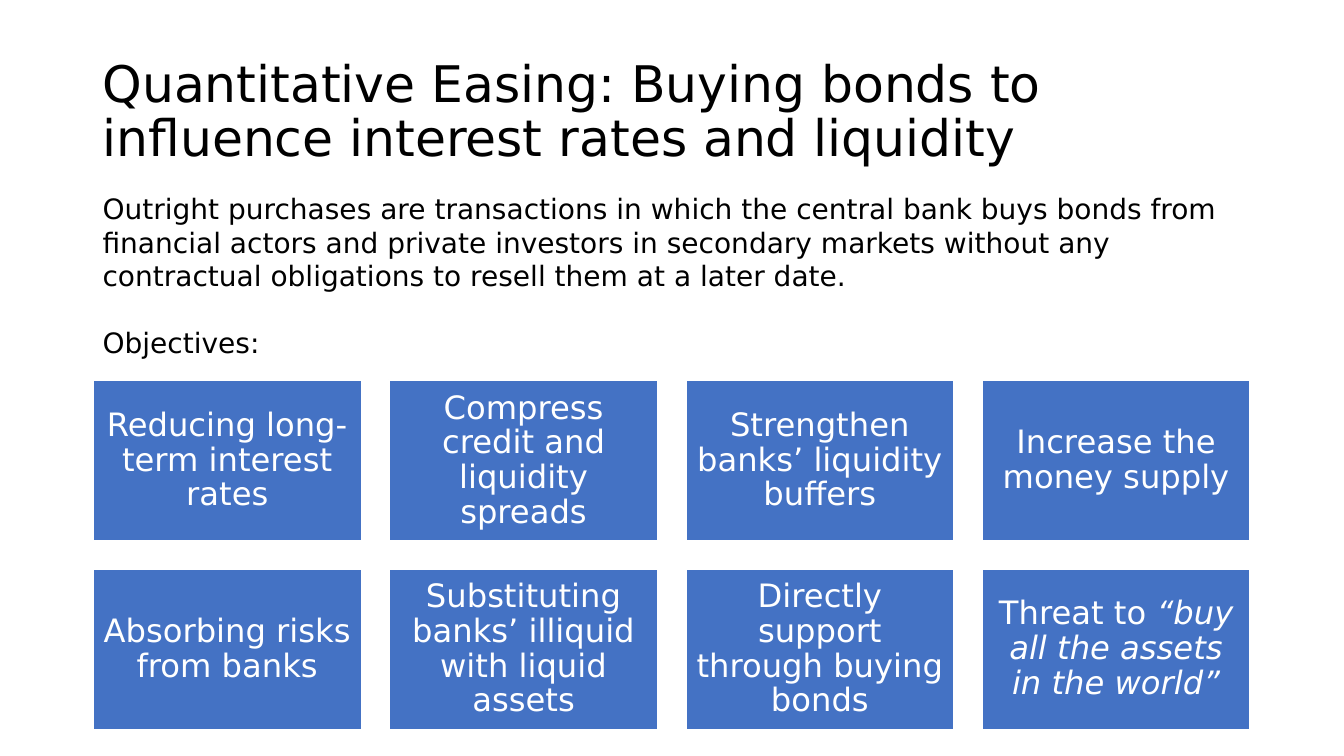
"""Build the slide on quantitative easing and its eight objectives."""
from dataclasses import dataclass

import pptx
import pptx.dml.color
import pptx.enum.shapes
import pptx.enum.text
import pptx.slide
import pptx.text.text
import pptx.util

Pt = pptx.util.Pt
BLACK = pptx.dml.color.RGBColor(0x00, 0x00, 0x00)
WHITE = pptx.dml.color.RGBColor(0xFF, 0xFF, 0xFF)
BLUE = pptx.dml.color.RGBColor(0x44, 0x72, 0xC4)
FONT = "DejaVu Sans"
MARGIN_LEFT = 66.2
CONTENT_WIDTH = 828
COLUMNS = 4
CARD_WIDTH = 192.4
CARD_HEIGHT = 115.4
CARD_GAP = 19.24
CARDS_TOP = 271.4


@dataclass(frozen=True)
class Objective:
    """An aim of the bond purchases, with an optional quotation."""
    wording: str
    quotation: str = ""


@dataclass(frozen=True)
class Passage:
    """A block of text above the objectives."""
    paragraphs: tuple[str, ...]
    top: float
    height: float
    size: float
    anchor: pptx.enum.text.MSO_ANCHOR
    line_spacing: float = 1.0
    paragraph_gap: float = 0


PASSAGES = (
    Passage(
        ("Quantitative Easing: Buying bonds to influence interest rates and liquidity",),
        28.75, 104.4, 36, pptx.enum.text.MSO_ANCHOR.MIDDLE, line_spacing=0.9,
    ),
    Passage(
        (
            "Outright purchases are transactions in which the central bank buys bonds "
            "from financial actors and private investors in secondary markets without "
            "any contractual obligations to resell them at a later date.",
            "Objectives:",
        ),
        133.2, 130, 20, pptx.enum.text.MSO_ANCHOR.TOP, paragraph_gap=23.5,
    ),
)

OBJECTIVES = (
    Objective("Reducing long-term interest rates"),
    Objective("Compress credit and liquidity spreads"),
    Objective("Strengthen banks’ liquidity buffers"),
    Objective("Increase the money supply"),
    Objective("Absorbing risks from banks"),
    Objective("Substituting banks’ illiquid with liquid assets"),
    Objective("Directly support through buying bonds"),
    Objective("Threat to ", "“buy all the assets in the world”"),
)


def add_run(
    paragraph: pptx.text.text._Paragraph,
    wording: str,
    size: float,
    color: pptx.dml.color.RGBColor,
    italic: bool = False,
) -> None:
    """Append one styled run."""
    run = paragraph.add_run()
    run.text = wording
    run.font.name = FONT
    run.font.size = Pt(size)
    run.font.color.rgb = color
    run.font.italic = italic


def set_frame(
    frame: pptx.text.text.TextFrame,
    anchor: pptx.enum.text.MSO_ANCHOR,
    vertical_inset: float,
) -> None:
    """Wrap the text and set its anchor and insets."""
    frame.word_wrap = True
    frame.vertical_anchor = anchor
    frame.margin_left = frame.margin_right = Pt(7.2)
    frame.margin_top = frame.margin_bottom = Pt(vertical_inset)


def draw_passage(slide: pptx.slide.Slide, passage: Passage) -> None:
    """Draw one block of text across the content width."""
    frame = slide.shapes.add_textbox(
        Pt(MARGIN_LEFT), Pt(passage.top), Pt(CONTENT_WIDTH), Pt(passage.height)
    ).text_frame
    set_frame(frame, passage.anchor, 3.6)
    for index, wording in enumerate(passage.paragraphs):
        paragraph = frame.add_paragraph() if index else frame.paragraphs[0]
        paragraph.line_spacing = passage.line_spacing
        paragraph.space_before = Pt(passage.paragraph_gap if index else 0)
        add_run(paragraph, wording, passage.size, BLACK)


def draw_objective(slide: pptx.slide.Slide, objective: Objective, index: int) -> None:
    """Draw one objective card at its place in the grid."""
    row, column = divmod(index, COLUMNS)
    card = slide.shapes.add_shape(
        pptx.enum.shapes.MSO_SHAPE.RECTANGLE,
        Pt(MARGIN_LEFT + column * (CARD_WIDTH + CARD_GAP)),
        Pt(CARDS_TOP + row * (CARD_HEIGHT + CARD_GAP)),
        Pt(CARD_WIDTH),
        Pt(CARD_HEIGHT),
    )
    card.shadow.inherit = False
    card.fill.solid()
    card.fill.fore_color.rgb = BLUE
    card.line.color.rgb = WHITE
    card.line.width = Pt(2)
    set_frame(card.text_frame, pptx.enum.text.MSO_ANCHOR.MIDDLE, 7.2)
    paragraph = card.text_frame.paragraphs[0]
    paragraph.alignment = pptx.enum.text.PP_ALIGN.CENTER
    paragraph.line_spacing = 0.9
    add_run(paragraph, objective.wording, 23, WHITE)
    if objective.quotation:
        add_run(paragraph, objective.quotation, 23, WHITE, italic=True)


def main() -> None:
    """Build and save the presentation."""
    presentation = pptx.Presentation()
    presentation.slide_width = Pt(960)
    presentation.slide_height = Pt(540)
    slide = presentation.slides.add_slide(presentation.slide_layouts[6])
    for passage in PASSAGES:
        draw_passage(slide, passage)
    for index, objective in enumerate(OBJECTIVES):
        draw_objective(slide, objective, index)
    presentation.save("out.pptx")


if __name__ == "__main__":
    main()
